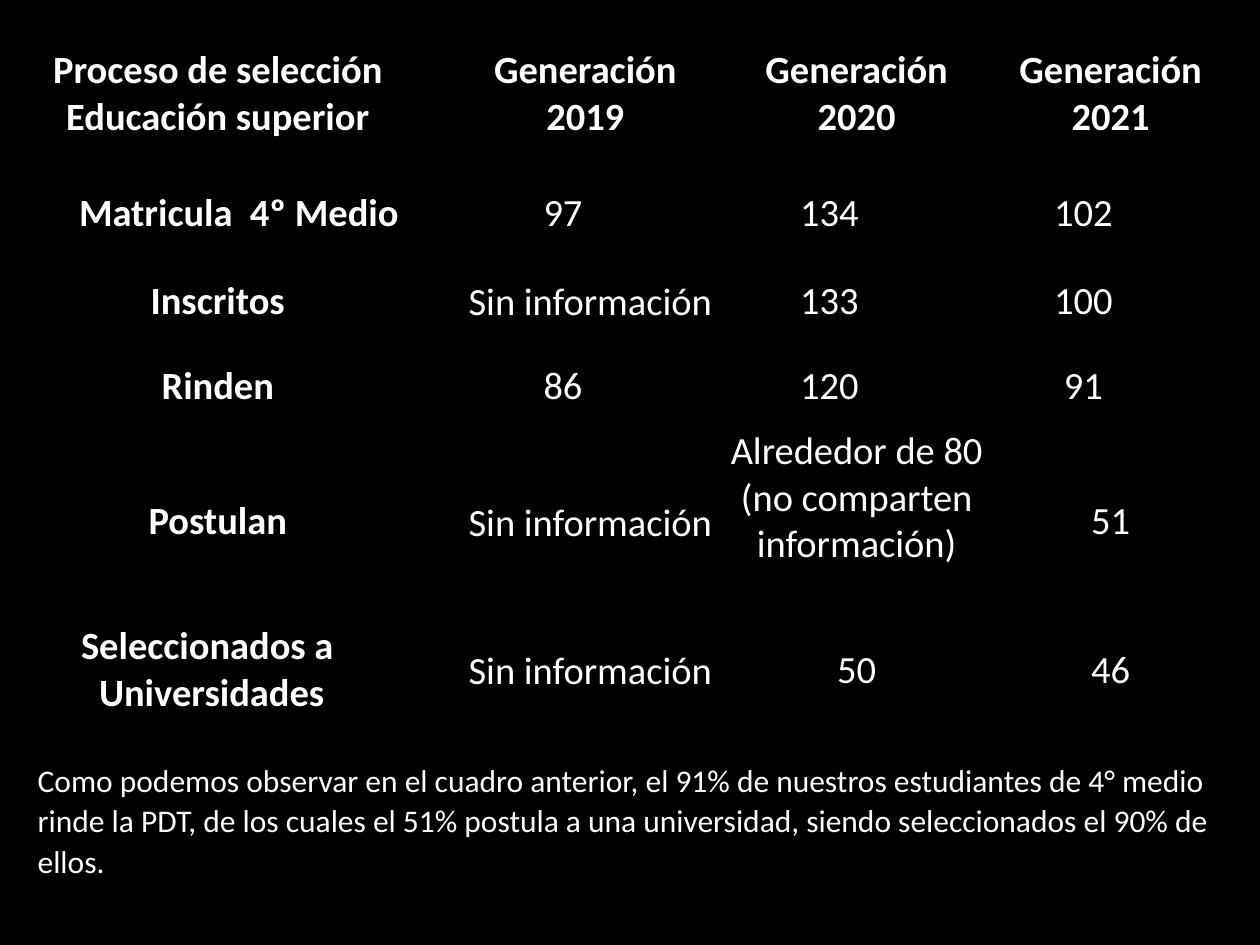
from lxml import etree
from pptx import Presentation
from pptx.dml.color import RGBColor
from pptx.enum import text
from pptx.oxml import ns
from pptx.util import Cm, Pt

FONT = "Calibri"
WHITE, BLACK = "FFFFFF", "000000"
LEFT, WIDTH = 0.51, 24.41
COLUMN_WIDTHS = [8.61, 5.56, 5.18, 5.06]
ROW_HEIGHTS = [3.05, 1.78, 1.75, 1.68, 3.78, 2.21]
NO_DATA = "Sin información"
ROWS = [
    ["Proceso de selección Educación superior", "Generación 2019",
     "Generación 2020", "Generación 2021"],
    ["Matricula  4º Medio", "97", "134", "102"],
    ["Inscritos", NO_DATA, "133", "100"],
    ["Rinden", "86", "120", "91"],
    ["Postulan", NO_DATA, "Alrededor de 80 (no comparten información)", "51"],
    ["Seleccionados a  Universidades", NO_DATA, "50", "46"],
]
# Right margins (cm) that move the centred text to the left, by row
RIGHT_MARGINS = [
    [0.85, 0.2, 0, 0],
    [0, 1.1, 1.1, 1.1],
    [0.85, 0, 1.1, 1.1],
    [0.85, 1.1, 1.1, 1.1],
    [0.85, 0, 0, 0],
    [1.1, 0, 0, 0],
]
NOTE = ("Como podemos observar en el cuadro anterior, el 91% de nuestros estudiantes "
        "de 4° medio rinde la PDT, de los cuales el 51% postula a una universidad, "
        "siendo seleccionados el 90% de ellos.")


def color(value):
    return RGBColor.from_string(value)


def format_paragraph(paragraph, size, bold=False):
    for span in paragraph.runs:
        span.font.name = FONT
        span.font.size = Pt(size)
        span.font.bold = bold
        span.font.color.rgb = color(WHITE)


def space_paragraph(paragraph):
    paragraph.line_spacing = 1.07
    paragraph.space_after = Pt(8)


def add_borders(cell, value, points):
    properties = cell._tc.get_or_add_tcPr()
    for position, side in enumerate(("lnL", "lnR", "lnT", "lnB")):
        line = etree.Element(ns.qn(f"a:{side}"), w=str(Pt(points)))
        fill = etree.SubElement(line, ns.qn("a:solidFill"))
        etree.SubElement(fill, ns.qn("a:srgbClr"), val=value)
        properties.insert(position, line)


def fill_cell(cell, words, bold, right_margin):
    cell.text_frame.text = words
    cell.vertical_anchor = text.MSO_ANCHOR.MIDDLE
    cell.margin_left = cell.margin_top = cell.margin_bottom = 0
    cell.margin_right = Cm(right_margin)
    cell.fill.background()
    add_borders(cell, BLACK, 1.5)
    paragraph = cell.text_frame.paragraphs[0]
    paragraph.alignment = text.PP_ALIGN.CENTER
    if words == NO_DATA:
        space_paragraph(paragraph)
    format_paragraph(paragraph, 22, bold)


def add_selection_table(page):
    table = page.shapes.add_table(
        len(ROWS), len(COLUMN_WIDTHS),
        Cm(LEFT), Cm(0.36), Cm(WIDTH), Cm(sum(ROW_HEIGHTS))).table
    table.first_row = table.horz_banding = False
    for column, width in zip(table.columns, COLUMN_WIDTHS):
        column.width = Cm(width)
    for i, height in enumerate(ROW_HEIGHTS):
        table.rows[i].height = Cm(height)
        for j, words in enumerate(ROWS[i]):
            fill_cell(table.cell(i, j), words, i == 0 or j == 0, RIGHT_MARGINS[i][j])
    # The long answer sits one line above the middle of its row
    table.cell(4, 2).margin_bottom = Cm(0.95)


def add_note(page):
    box = page.shapes.add_textbox(Cm(LEFT), Cm(15.16), Cm(WIDTH), Cm(2.69))
    box.text_frame.word_wrap = True
    box.text_frame.auto_size = text.MSO_AUTO_SIZE.SHAPE_TO_FIT_TEXT
    box.text_frame.text = NOTE
    paragraph = box.text_frame.paragraphs[0]
    space_paragraph(paragraph)
    format_paragraph(paragraph, 18)


def main():
    deck = Presentation()
    deck.slide_width, deck.slide_height = Cm(25.4), Cm(19.05)
    page = deck.slides.add_slide(deck.slide_layouts[6])
    page.background.fill.solid()
    page.background.fill.fore_color.rgb = color(BLACK)
    add_selection_table(page)
    add_note(page)
    deck.save("out.pptx")


if __name__ == "__main__":
    main()
